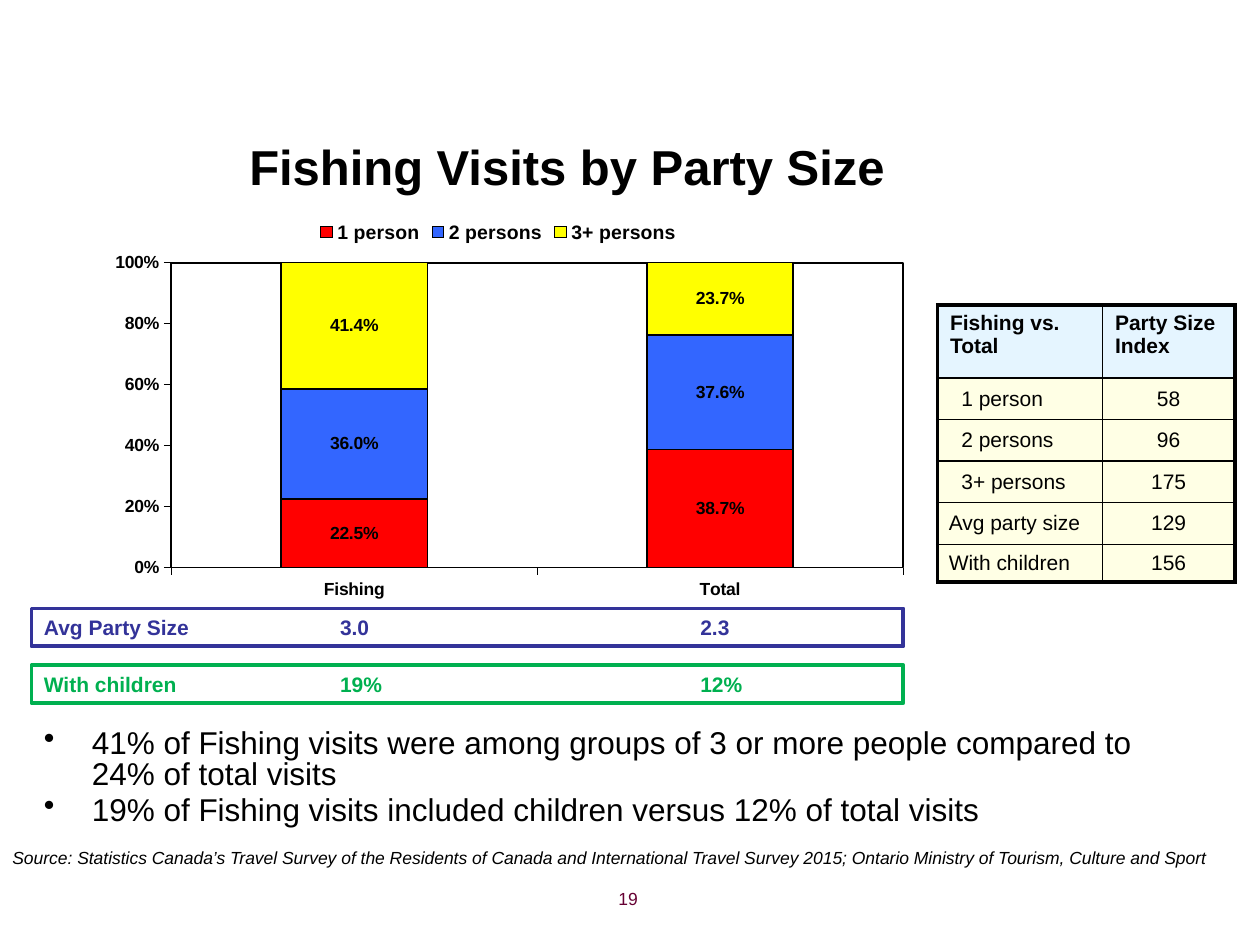
"""Build the slide on fishing visits by party size."""
from lxml import etree
from pptx import Presentation
from pptx.chart.data import CategoryChartData
from pptx.dml.color import RGBColor
from pptx.enum.chart import XL_CHART_TYPE, XL_LEGEND_POSITION, XL_TICK_MARK
from pptx.enum.shapes import MSO_SHAPE
from pptx.enum.text import MSO_ANCHOR, PP_ALIGN
from pptx.oxml import parse_xml
from pptx.oxml.ns import nsdecls, qn
from pptx.util import Inches, Pt

LEFT, MID, RIGHT = PP_ALIGN.LEFT, PP_ALIGN.CENTER, PP_ALIGN.RIGHT
TOP, HALF = MSO_ANCHOR.TOP, MSO_ANCHOR.MIDDLE
STACK = XL_CHART_TYPE.COLUMN_STACKED_100
ABOVE = XL_LEGEND_POSITION.TOP
OUT = XL_TICK_MARK.OUTSIDE
RECT = MSO_SHAPE.RECTANGLE
BLACK = "000000"


def paint(font, size, hue=BLACK, bold=False):
    font.name, font.size, font.bold = "Arial", Pt(size), bold
    font.color.rgb = RGBColor.from_string(hue)


def write(frame, text, size, hue=BLACK, bold=False, align=LEFT, anchor=TOP):
    frame.word_wrap = True
    frame.vertical_anchor = anchor
    frame.text = text
    for par in frame.paragraphs:
        par.alignment = align
        for run in par.runs:
            paint(run.font, size, hue, bold)
    return frame


deck = Presentation()
deck.slide_width, deck.slide_height = Inches(10), Inches(7.5)
slide = deck.slides.add_slide(deck.slide_layouts[6])
shapes = slide.shapes

points = (
    "41% of Fishing visits were among groups of 3 or more people compared to 24% of total visits\n"
    "19% of Fishing visits included children versus 12% of total visits"
)
source = (
    "Source: Statistics Canada’s Travel Survey of the Residents of Canada and "
    "International Travel Survey 2015; Ontario Ministry of Tourism, Culture and Sport"
)
frames = []
for x, y, w, h, *look in (
    (0, 0.97, 9, 0.69, "Fishing Visits by Party Size", 28, BLACK, True, MID, HALF),
    (0.25, 5.75, 8.98, 0.75, points, 18),
    (0, 6.67, 9.8, 0.27, source, 10),
    (2.83, 7, 2.33, 0.35, "19", 10, "660033", False, RIGHT),
):
    box = shapes.add_textbox(Inches(x), Inches(y), Inches(w), Inches(h))
    frames.append(write(box.text_frame, *look))
frames[2].paragraphs[0].runs[0].font.italic = True
for row, par in enumerate(frames[1].paragraphs):
    par.line_spacing = 0.8
    par.space_before = Pt(3.6 * row)
    props = par._p.get_or_add_pPr()
    props.set("marL", str(Inches(0.38)))
    props.set("indent", str(-Inches(0.38)))
    etree.SubElement(props, qn("a:buChar")).set("char", "•")

data = CategoryChartData(number_format="0.0%")
data.categories = ["Fishing", "Total"]
series = (
    ("1 person", (0.225, 0.387), "FF0000"),
    ("2 persons", (0.36, 0.376), "3366FF"),
    ("3+ persons", (0.414, 0.237), "FFFF00"),
)
for name, values, hue in series:
    data.add_series(name, values)
chart = shapes.add_chart(
    STACK, Inches(0.67), Inches(1.64), Inches(6.57), Inches(3.8), data
).chart
paint(chart.font, 10, bold=True)
chart.has_title = False
chart.has_legend = True
chart.legend.position = ABOVE
chart.legend.include_in_layout = False
paint(chart.legend.font, 11.1, bold=True)
plot = chart.plots[0]
plot.gap_width, plot.overlap = 150, 100
plot.vary_by_categories = False
for bar, (name, values, hue) in zip(plot.series, series):
    bar.format.fill.solid()
    bar.format.fill.fore_color.rgb = RGBColor.from_string(hue)
    bar.format.line.color.rgb = RGBColor.from_string(BLACK)
    bar.format.line.width = Pt(1)
    tags = bar.data_labels
    tags.show_value = True
    tags.number_format, tags.number_format_is_linked = "0.0%", False
    paint(tags.font, 10, bold=True)
for axis in (chart.category_axis, chart.value_axis):
    axis.major_tick_mark = OUT
    axis.has_major_gridlines = False
    axis.format.line.color.rgb = RGBColor.from_string(BLACK)
    axis.format.line.width = Pt(0.25)
    paint(axis.tick_labels.font, 10, bold=True)
scale = chart.value_axis
scale.minimum_scale, scale.maximum_scale, scale.major_unit = 0, 1, 0.2
scale.tick_labels.number_format = "0%"
scale.tick_labels.number_format_is_linked = False

area = chart._chartSpace.chart.plotArea
for old in area.findall(qn("c:layout")):
    area.remove(old)
spots = "".join(
    f'<c:{tag} val="{val}"/>'
    for tag, val in (
        ("layoutTarget", "inner"), ("xMode", "edge"), ("yMode", "edge"),
        ("x", 0.105), ("y", 0.117), ("w", 0.884), ("h", 0.637),
    )
)
area.insert(0, parse_xml(
    f'<c:layout {nsdecls("c")}><c:manualLayout>{spots}</c:manualLayout></c:layout>'
))
area.append(parse_xml(
    f'<c:spPr {nsdecls("c", "a")}><a:noFill/><a:ln w="12700"><a:solidFill>'
    f'<a:srgbClr val="{BLACK}"/></a:solidFill></a:ln></c:spPr>'
))

rows = (
    ("Fishing vs. Total", "Party Size Index"),
    ("1 person", "58"),
    ("2 persons", "96"),
    ("3+ persons", "175"),
    ("Avg party size", "129"),
    ("With children", "156"),
)
last = len(rows) - 1
table = shapes.add_table(
    len(rows), 2, Inches(7.44), Inches(2.42), Inches(2.36), Inches(2.2)
).table
for col, wide in zip(table.columns, (1.31, 1.05)):
    col.width = Inches(wide)
for row, tall in zip(table.rows, (0.58, 0.33, 0.33, 0.33, 0.33, 0.3)):
    row.height = Inches(tall)
for r, texts in enumerate(rows):
    for c, text in enumerate(texts):
        cell = table.cell(r, c)
        head = r == 0
        pad = 0.1 if head else 0 if c else 0.19 if r < 4 else 0.09
        cell.margin_left = Inches(pad)
        cell.margin_right = Inches(0.1 if head else 0)
        cell.margin_top = cell.margin_bottom = Inches(0.05 if head else 0)
        align = MID if c and not head else LEFT
        write(cell.text_frame, text, 12, bold=head, align=align)
        cell.vertical_anchor = TOP if head else HALF
        cell.fill.solid()
        cell.fill.fore_color.rgb = RGBColor.from_string("CCECFF" if head else "FFFFCC")
        props = cell._tc.get_or_add_tcPr()
        tint = props.find(".//" + qn("a:srgbClr"))
        etree.SubElement(tint, qn("a:alpha")).set("val", "50000")
        edges = (("L", c == 0), ("R", c == 1), ("T", head), ("B", r == last))
        for n, (side, thick) in enumerate(edges):
            props.insert(n, parse_xml(
                f'<a:ln{side} {nsdecls("a")} w="{Pt(2.25 if thick else 1)}"><a:solidFill>'
                f'<a:srgbClr val="{BLACK}"/></a:solidFill></a:ln{side}>'
            ))

bands = (
    ("Avg Party Size\t3.0\t2.3", "333399"),
    ("With children\t19%\t12%", "00B050"),
)
for n, (text, hue) in enumerate(bands):
    band = shapes.add_shape(
        RECT, Inches(0.25), Inches(4.83 + 0.45 * n), Inches(6.92), Inches(0.3)
    )
    band.shadow.inherit = False
    band.fill.background()
    band.line.color.rgb = RGBColor.from_string(hue)
    band.line.width = Pt(2.25)
    frame = write(band.text_frame, text, 12, hue, True, LEFT, HALF)
    props = frame.paragraphs[0]._p.get_or_add_pPr()
    stops = etree.SubElement(props, qn("a:tabLst"))
    for stop in (2.35, 5.21):
        tab = etree.SubElement(stops, qn("a:tab"))
        tab.set("pos", str(Inches(stop)))
        tab.set("algn", "l")

deck.save("out.pptx")
